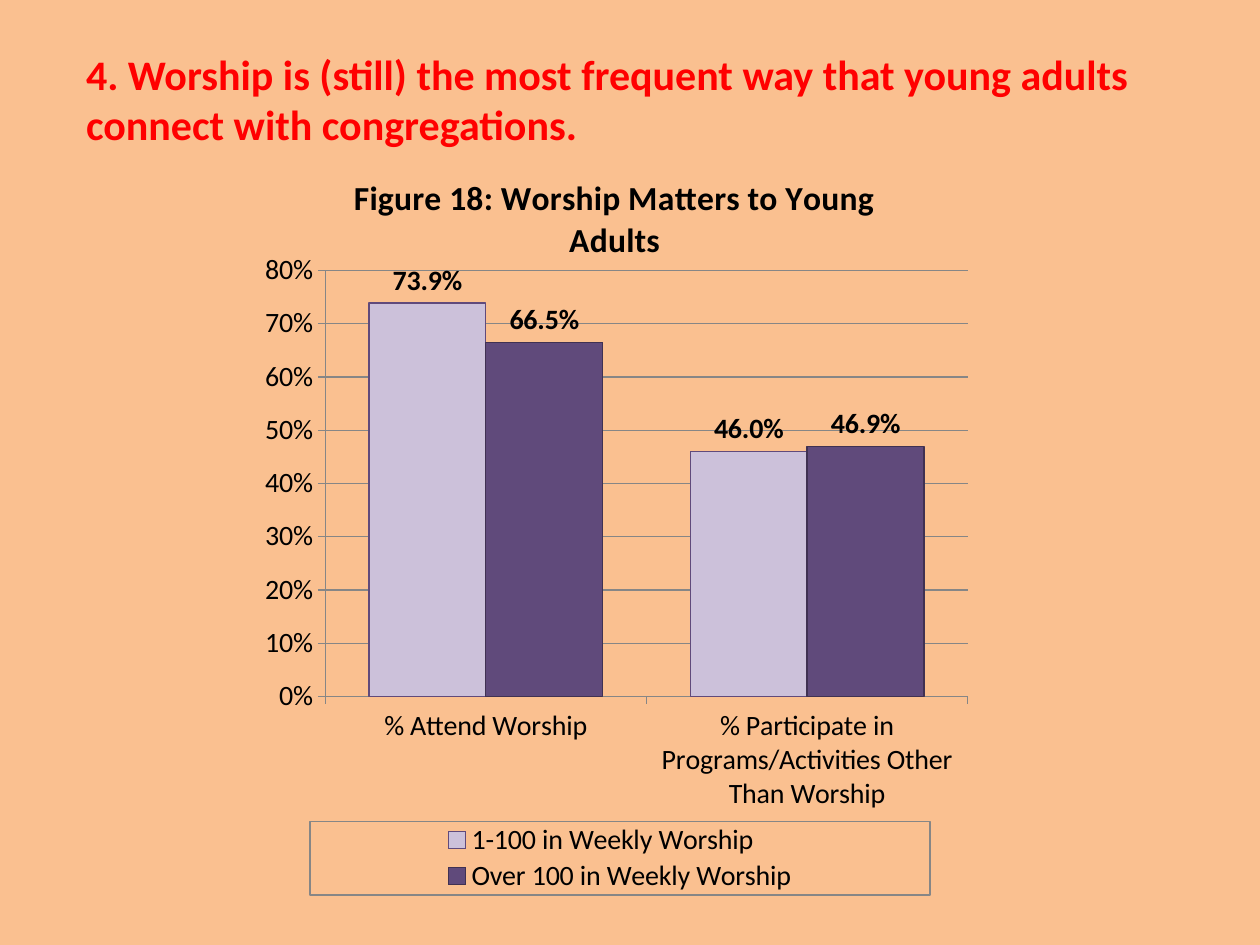
import pptx
import pptx.util
import pptx.dml.color
import pptx.chart.data
import pptx.enum.chart
import pptx.oxml
from pptx.oxml.ns import nsdecls

Cm, Pt = pptx.util.Cm, pptx.util.Pt
kinds = pptx.enum.chart

# Content
lead = ("4. Worship is (still) the most frequent way that young adults "
        "connect with congregations.")
head = "Figure 18: Worship Matters to Young Adults"
cats = ["% Attend Worship",
        "% Participate in Programs/Activities Other Than Worship"]
rows = [  # name, values, fill, outline
    ("1-100 in Weekly Worship", (0.739, 0.46), "CCC1DA", "604A7B"),
    ("Over 100 in Weekly Worship", (0.665, 0.469), "604A7B", "403152"),
]
face, grey = "Calibri", "868686"


def paint(target, code):
    """Give a fill, line or font a solid colour."""
    if hasattr(target, "solid"):
        target.solid()
        target = target.fore_color
    else:
        target = target.color
    target.rgb = pptx.dml.color.RGBColor.from_string(code)


def style(item, **vals):
    for key, val in vals.items():
        setattr(item, key, val)


def rule(line, code):
    paint(line, code)
    line.width = Pt(0.75)


def place(part, before, inner=False, **spots):
    """Fix a chart part at fractions of the chart's size."""
    for old in part.findall(pptx.oxml.ns.qn("c:layout")):
        part.remove(old)
    body = '<c:layoutTarget val="inner"/>' if inner else ""
    body += "".join(f'<c:{k}Mode val="edge"/>' for k in spots if k in "xy")
    body += "".join(f'<c:{k} val="{v}"/>' for k, v in spots.items())
    node = pptx.oxml.parse_xml(
        f'<c:layout {nsdecls("c")}><c:manualLayout>{body}'
        '</c:manualLayout></c:layout>')
    part.find(pptx.oxml.ns.qn(before)).addprevious(node)


# Slide
deck = pptx.Presentation()
style(deck, slide_width=Cm(25.4), slide_height=Cm(19.05))
slide = deck.slides.add_slide(deck.slide_layouts[1])
paint(slide.background.fill, "FAC090")
title = slide.shapes.title.element
title.getparent().remove(title)

# Lead sentence
box = slide.placeholders[1]
style(box, left=Cm(1.48), top=Cm(0.85), width=Cm(22.86), height=Cm(2.54))
para = box.text_frame.paragraphs[0]
para.text = lead
props = para._p.get_or_add_pPr()
props.set("marL", "0")
props.set("indent", "0")
props.append(pptx.oxml.parse_xml(f'<a:buNone {nsdecls("a")}/>'))
font = para.runs[0].font
style(font, name=face, size=Pt(24), bold=True)
paint(font, "FF0000")

# Chart
data = pptx.chart.data.CategoryChartData(number_format="0.0%")
data.categories = cats
for name, vals, *_ in rows:
    data.add_series(name, vals)
chart = slide.shapes.add_chart(
    kinds.XL_CHART_TYPE.COLUMN_CLUSTERED,
    Cm(4.88), Cm(3.38), Cm(15.24), Cm(14.81), data).chart
style(chart.font, name=face, size=Pt(16))
paint(chart.font, "000000")

# Chart title, kept clear of the plot below it
chart.has_title = True
frame = chart.chart_title.text_frame
frame.text = head
font = frame.paragraphs[0].runs[0].font
style(font, name=face, size=Pt(19.2), bold=True)
paint(font, "000000")
place(chart.chart_title._element, "c:overlay", x=0.14, y=0)

# Columns and labels
plot = chart.plots[0]
style(plot, gap_width=75, overlap=0, vary_by_categories=False)
for bars, (_, _, fill, edge) in zip(plot.series, rows):
    paint(bars.format.fill, fill)
    rule(bars.format.line, edge)
    tags = bars.data_labels
    style(tags, show_value=True, number_format="0.0%",
          number_format_is_linked=False,
          position=kinds.XL_LABEL_POSITION.OUTSIDE_END)
    style(tags.font, name=face, size=Pt(16), bold=True)
    paint(tags.font, "000000")

# Axes
for axis in (chart.category_axis, chart.value_axis):
    axis.major_tick_mark = kinds.XL_TICK_MARK.OUTSIDE
    rule(axis.format.line, grey)
style(chart.value_axis, minimum_scale=0, maximum_scale=0.8, major_unit=0.1,
      has_major_gridlines=True)
style(chart.value_axis.tick_labels, number_format="0%",
      number_format_is_linked=False)
rule(chart.value_axis.major_gridlines.format.line, grey)
place(chart._chartSpace.chart.plotArea, "c:barChart", inner=True,
      x=0.11, y=0.14, w=0.85, h=0.58)

# Legend
chart.has_legend = True
key = chart.legend
style(key, position=kinds.XL_LEGEND_POSITION.BOTTOM, include_in_layout=False)
place(key._element, "c:overlay", x=0.09, y=0.89, w=0.82, h=0.1)
key._element.find(pptx.oxml.ns.qn("c:overlay")).addnext(pptx.oxml.parse_xml(
    f'<c:spPr {nsdecls("c", "a")}><a:ln w="9525"><a:solidFill>'
    f'<a:srgbClr val="{grey}"/></a:solidFill></a:ln></c:spPr>'))

deck.save("out.pptx")
